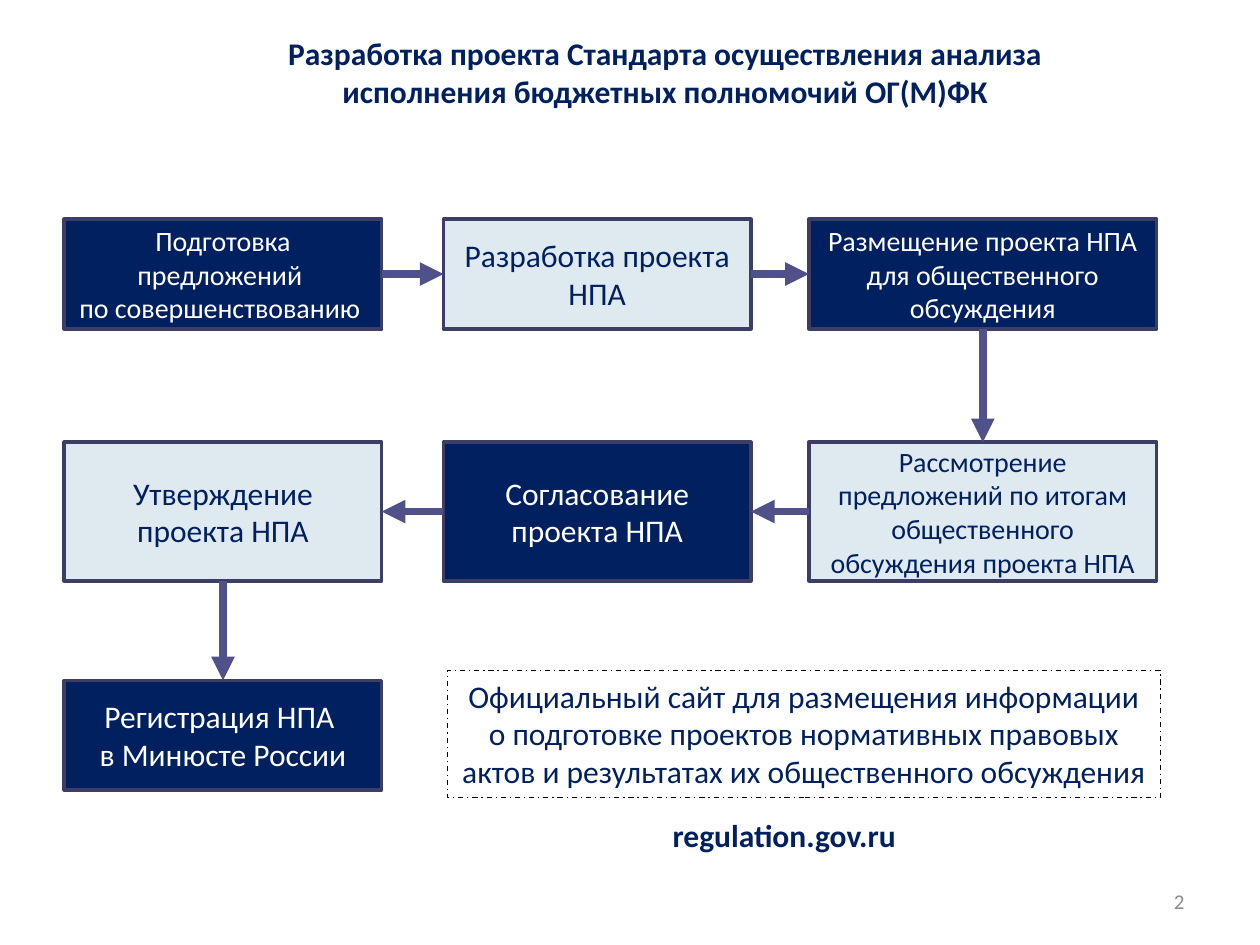
import pptx
import pptx.dml.color
import pptx.enum.dml
import pptx.enum.shapes
import pptx.enum.text
import pptx.oxml.ns
import pptx.util
import lxml.etree

Inches = pptx.util.Inches
Pt = pptx.util.Pt
Align = pptx.enum.text.PP_ALIGN
Anchor = pptx.enum.text.MSO_ANCHOR
RECTANGLE = pptx.enum.shapes.MSO_SHAPE.RECTANGLE

NAVY = pptx.dml.color.RGBColor(0x00, 0x20, 0x60)
PALE = pptx.dml.color.RGBColor(0xDE, 0xE9, 0xF0)
WHITE = pptx.dml.color.RGBColor(0xFF, 0xFF, 0xFF)
BLACK = pptx.dml.color.RGBColor(0x00, 0x00, 0x00)
GRAY = pptx.dml.color.RGBColor(0x8C, 0x8C, 0x8C)
BORDER = pptx.dml.color.RGBColor(0x3D, 0x3E, 0x66)
ARROW = pptx.dml.color.RGBColor(0x50, 0x51, 0x88)


def write(shape, wording, color, size=18, bold=False, align=Align.CENTER,
          anchor=Anchor.TOP, wrap=True):
    frame = shape.text_frame
    frame.text = wording
    frame_format = {"word_wrap": wrap, "vertical_anchor": anchor,
                    "auto_size": pptx.enum.text.MSO_AUTO_SIZE.NONE}
    for name, value in frame_format.items():
        setattr(frame, name, value)
    paragraph = frame.paragraphs[0]
    paragraph.alignment = align
    for run in paragraph.runs:
        for name, value in {"name": "Calibri", "size": Pt(size), "bold": bold}.items():
            setattr(run.font, name, value)
        run.font.color.rgb = color


def add_box(left, top, width, height, border, weight):
    box = slide.shapes.add_shape(RECTANGLE, *map(Inches, (left, top, width, height)))
    box.shadow.inherit = False
    box.line.color.rgb = border
    box.line.width = Pt(weight)
    return box


deck = pptx.Presentation()
deck.slide_width, deck.slide_height = Inches(10), Inches(7.5)
slide = deck.slides.add_slide(deck.slide_layouts[5])

heading = slide.shapes.title
heading_place = {"left": 2.01, "top": 0.22, "width": 6.54, "height": 0.71}
for name, value in heading_place.items():
    setattr(heading, name, Inches(value))
write(heading, "Разработка проекта Стандарта осуществления анализа "
      "исполнения бюджетных полномочий ОГ(М)ФК", NAVY, bold=True)

columns = [(0.51, 2.52), (3.52, 2.44), (6.42, 2.76)]
rows = [(1.74, 0.87), (3.51, 1.1), (5.4, 0.87)]
stages = [
    (0, 0, 16, "Подготовка предложений \vпо совершенствованию "),
    (1, 0, 18, "Разработка проекта НПА"),
    (2, 0, 16, "Размещение проекта НПА для общественного обсуждения"),
    (2, 1, 16, "Рассмотрение предложений по итогам общественного обсуждения проекта НПА"),
    (1, 1, 18, "Согласование проекта НПА"),
    (0, 1, 18, "Утверждение проекта НПА"),
    (0, 2, 18, "Регистрация НПА \vв Минюсте России"),
]
steps = []
for order, (column, row, size, wording) in enumerate(stages):
    left, width = columns[column]
    top, height = rows[row]
    step = add_box(left, top, width, height, BORDER, 2)
    fill, ink = (PALE, NAVY) if order % 2 else (NAVY, WHITE)
    step.fill.solid()
    step.fill.fore_color.rgb = fill
    write(step, wording, ink, size, anchor=Anchor.MIDDLE)
    steps.append(step)

TOP, LEFT, BOTTOM, RIGHT = range(4)
sides = [(RIGHT, LEFT), (RIGHT, LEFT), (BOTTOM, TOP),
         (LEFT, RIGHT), (LEFT, RIGHT), (BOTTOM, TOP)]
for before, after, (leaving, entering) in zip(steps, steps[1:], sides):
    arrow = slide.shapes.add_connector(pptx.enum.shapes.MSO_CONNECTOR.STRAIGHT, 0, 0, 0, 0)
    arrow.begin_connect(before, leaving)
    arrow.end_connect(after, entering)
    arrow.line.color.rgb = ARROW
    arrow.line.width = Pt(4.5)
    head = lxml.etree.SubElement(arrow.line._get_or_add_ln(), pptx.oxml.ns.qn("a:tailEnd"))
    head.set("type", "triangle")
    lxml.etree.SubElement(arrow._element.spPr, pptx.oxml.ns.qn("a:effectLst"))

site_purpose = add_box(3.55, 5.32, 5.66, 1.01, BLACK, 0.75)
site_purpose.fill.background()
site_purpose.line.dash_style = pptx.enum.dml.MSO_LINE.DASH_DOT
write(site_purpose, "Официальный сайт для размещения информации о подготовке проектов "
      "нормативных правовых актов и результатах их общественного обсуждения", NAVY)

site_address = slide.shapes.add_textbox(*map(Inches, (5.24, 6.43, 1.98, 0.4)))
write(site_address, "regulation.gov.ru", NAVY, bold=True, align=Align.LEFT, wrap=False)

page_number = slide.shapes.add_textbox(*map(Inches, (7.17, 6.95, 2.33, 0.4)))
write(page_number, "2", GRAY, 12, align=Align.RIGHT, anchor=Anchor.MIDDLE)

deck.save("out.pptx")
